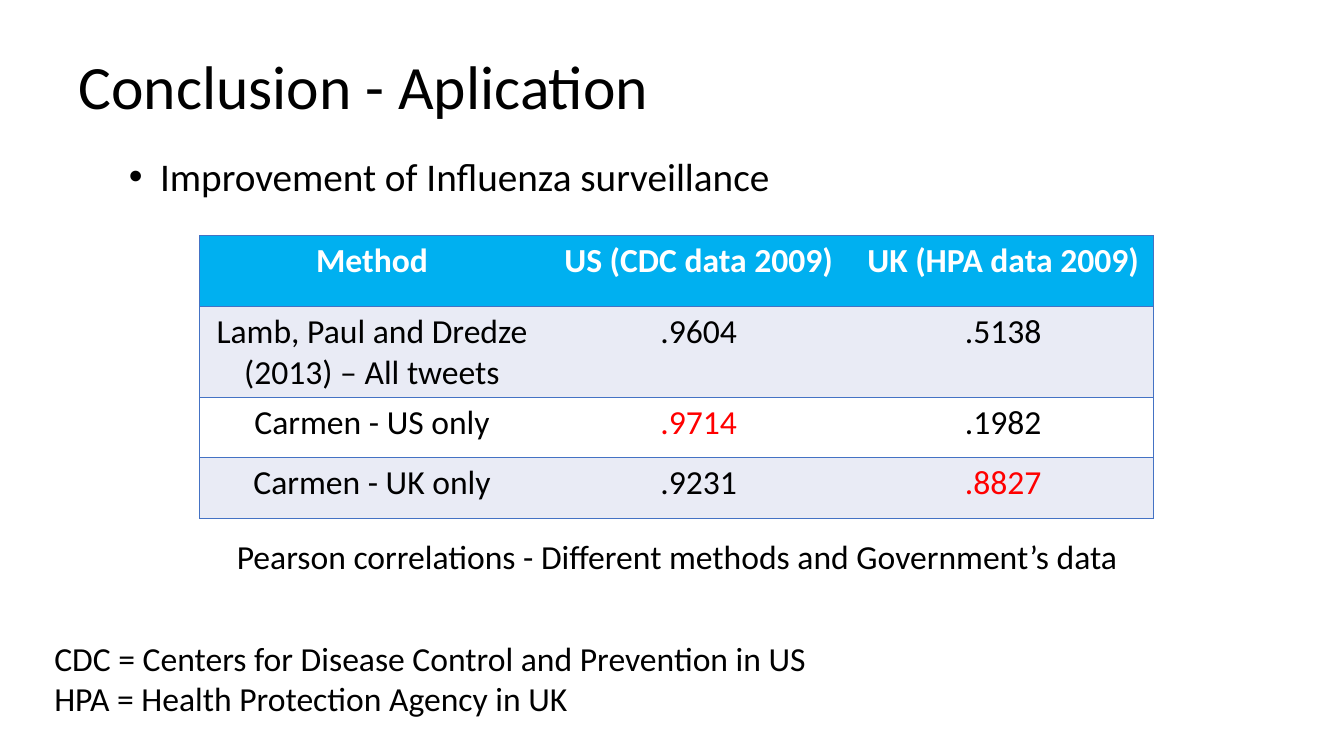
from dataclasses import dataclass

from lxml import etree
from pptx import Presentation
from pptx import util as u
from pptx.dml.color import RGBColor
from pptx.enum import text as t
from pptx.oxml import ns

BLACK = RGBColor(0x00, 0x00, 0x00)
WHITE = RGBColor(0xFF, 0xFF, 0xFF)
RED = RGBColor(0xFF, 0x00, 0x00)
SKY = RGBColor(0x00, 0xB0, 0xF0)
PALE = RGBColor(0xE9, 0xEB, 0xF5)
BLUE = RGBColor(0x44, 0x72, 0xC4)
FONT = "Calibri"


@dataclass
class Note:
    box: tuple[float, float, float, float]
    lines: list[str]
    size: int = 24
    center: bool = False
    bullet: bool = False


NOTES = [
    Note((0.68, 0.43, 6.28, 0.84), ["Conclusion - Aplication"], size=44),
    Note((0.68, 1.46, 11.27, 0.57), ["Improvement of Influenza surveillance"],
         size=28, bullet=True),
    Note((1.98, 5.27, 9.47, 0.5),
         ["Pearson correlations - Different methods and Government’s data"],
         center=True),
    Note((0.44, 6.28, 8.14, 0.91),
         ["CDC = Centers for Disease Control and Prevention in US",
          "HPA = Health Protection Agency in UK"]),
]

ROWS = [
    ["Method", "US (CDC data 2009)", "UK (HPA data 2009)"],
    ["Lamb, Paul and Dredze (2013) – All tweets", ".9604", ".5138"],
    ["Carmen - US only", ".9714", ".1982"],
    ["Carmen - UK only", ".9231", ".8827"],
]
BEST = {".9714", ".8827"}
FILLS = [SKY, PALE, WHITE, PALE]
WIDTHS = [3.42, 3.06, 2.98]
HEIGHTS = [0.7, 0.9, 0.6, 0.6]


def write(para, words: str, *, size: int = 24, color: RGBColor = BLACK,
          bold: bool = False, center: bool = False) -> None:
    para.alignment = t.PP_ALIGN.CENTER if center else t.PP_ALIGN.LEFT
    run = para.add_run()
    run.text = words
    run.font.name = FONT
    run.font.size = u.Pt(size)
    run.font.bold = bold
    run.font.color.rgb = color


def add_dot(para) -> None:
    props = para._p.get_or_add_pPr()
    props.set("lvl", "1")
    props.set("marL", str(u.Inches(0.81)))
    props.set("indent", str(u.Inches(-0.31)))
    etree.SubElement(props, ns.qn("a:buFont"), typeface="Arial")
    etree.SubElement(props, ns.qn("a:buChar"), char="•")


def add_note(slide, note: Note) -> None:
    frame = slide.shapes.add_textbox(*map(u.Inches, note.box)).text_frame
    frame.word_wrap = True
    for i, line in enumerate(note.lines):
        para = frame.add_paragraph() if i else frame.paragraphs[0]
        write(para, line, size=note.size, center=note.center)
        if note.bullet:
            add_dot(para)


def set_edges(cell, shown: str) -> None:
    props = cell._tc.get_or_add_tcPr()
    for side in "LRTB":
        line = etree.SubElement(props, ns.qn(f"a:ln{side}"), w=str(u.Pt(1)))
        if side in shown:
            fill = etree.SubElement(line, ns.qn("a:solidFill"))
            etree.SubElement(fill, ns.qn("a:srgbClr"), val=str(BLUE))
        else:
            etree.SubElement(line, ns.qn("a:noFill"))


def add_grid(slide) -> None:
    box = (1.98, 2.34, sum(WIDTHS), sum(HEIGHTS))
    grid = slide.shapes.add_table(
        len(ROWS), len(WIDTHS), *map(u.Inches, box)).table
    for col, width in zip(grid.columns, WIDTHS):
        col.width = u.Inches(width)
    for r, row in enumerate(ROWS):
        grid.rows[r].height = u.Inches(HEIGHTS[r])
        for c, words in enumerate(row):
            cell = grid.cell(r, c)
            # Outer frame and row rules, no inner column rules
            set_edges(cell, "TB" + ("L", "", "R")[c])
            cell.fill.solid()
            cell.fill.fore_color.rgb = FILLS[r]
            head = r == 0
            color = WHITE if head else RED if words in BEST else BLACK
            write(cell.text_frame.paragraphs[0], words,
                  color=color, bold=head, center=True)


def main() -> None:
    deck = Presentation()
    deck.slide_width = u.Inches(13.33)
    deck.slide_height = u.Inches(7.5)
    slide = deck.slides.add_slide(deck.slide_layouts[6])

    # Title, bullet, caption and key
    for note in NOTES:
        add_note(slide, note)

    # Table of correlations
    add_grid(slide)

    deck.save("out.pptx")


if __name__ == "__main__":
    main()
